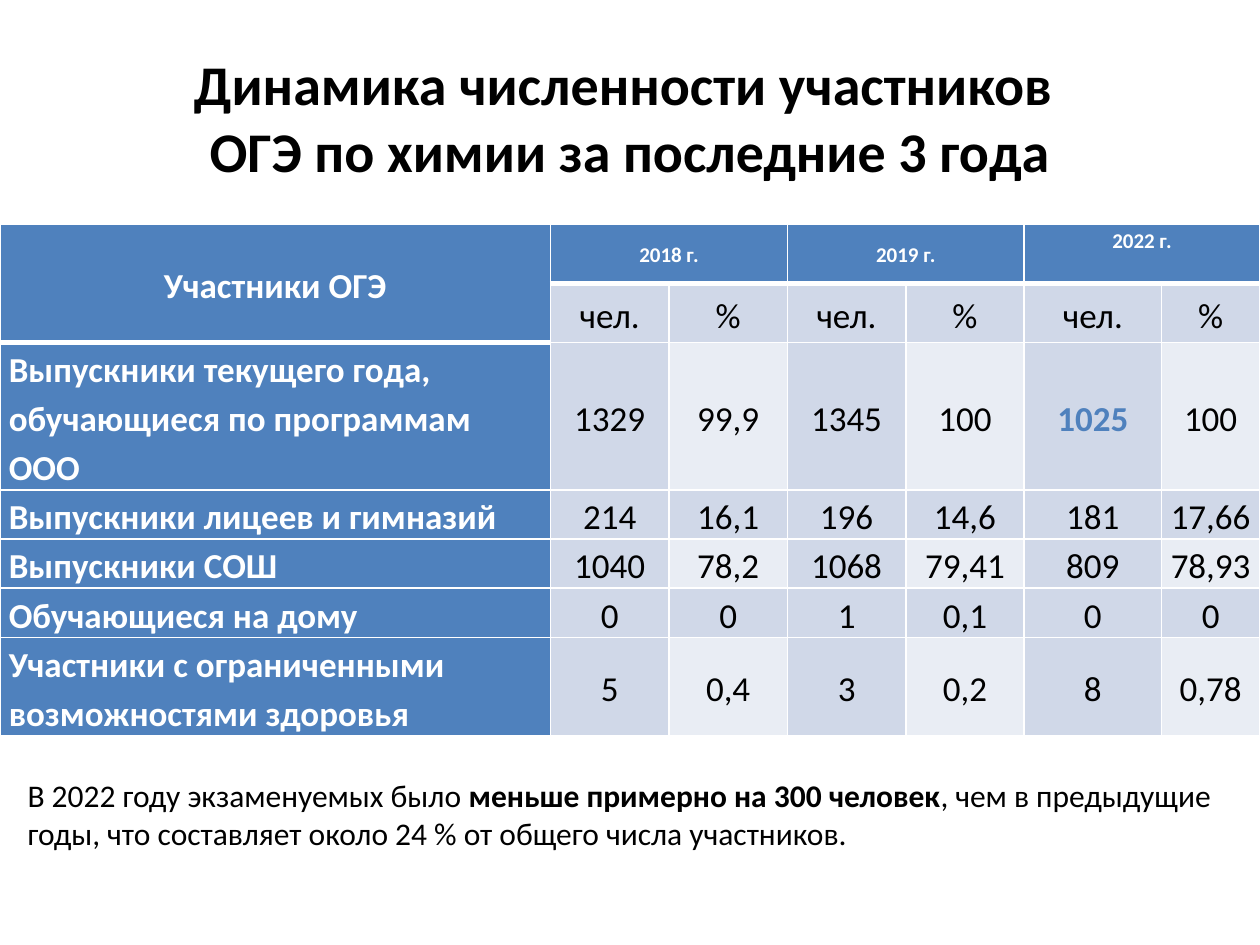
from itertools import accumulate
from typing import NamedTuple

from lxml.etree import SubElement
from pptx import Presentation
from pptx.dml.color import RGBColor as Rgb
from pptx.enum.text import MSO_ANCHOR as Anchor, PP_ALIGN as Align
from pptx.oxml.ns import qn
from pptx.util import Inches, Pt

SLIDE_WIDTH, SLIDE_HEIGHT = 10, 7.5
FONT = "Calibri"
COLORS = {
    "header": "4F81BD",
    "band": "D0D8E8",
    "light": "E9EDF4",
    "text": "000000",
    "white": "FFFFFF",
}
COLUMN_SHARES = (0.437, 0.094, 0.094, 0.094, 0.094, 0.109, 0.078)
ROW_HEIGHTS = (0.47, 0.47, 1.17, 0.39, 0.39, 0.39, 0.78)
YEARS = ("2018 г.", "2019 г.", "2022 г.")
TABLE_TOP = 1.78


class Box(NamedTuple):
    left: float
    top: float
    width: float
    height: float


class Group(NamedTuple):
    label: str
    values: tuple[str, ...]


GROUPS = (
    Group("Выпускники текущего года, обучающиеся по программам ООО",
          ("1329", "99,9", "1345", "100", "1025", "100")),
    Group("Выпускники лицеев и гимназий",
          ("214", "16,1", "196", "14,6", "181", "17,66")),
    Group("Выпускники СОШ",
          ("1040", "78,2", "1068", "79,41", "809", "78,93")),
    Group("Обучающиеся на дому", ("0", "0", "1", "0,1", "0", "0")),
    Group("Участники с ограниченными возможностями здоровья",
          ("5", "0,4", "3", "0,2", "8", "0,78")),
)
TITLE_BOX = Box(0.05, 0.04, 0.9, 1.25 / SLIDE_HEIGHT)
SUMMARY_BOX = Box(0.012, 6.11 / SLIDE_HEIGHT, 0.969, 1.01 / SLIDE_HEIGHT)


def write(paragraph, text: str, *, size: float, color: str = "text",
          bold: bool = False, align=Align.LEFT, spacing: float = 1.0) -> None:
    paragraph.alignment = align
    paragraph.line_spacing = spacing
    first = len(paragraph.runs)
    for index, line in enumerate(text.split("\n")):
        if index:
            paragraph.add_line_break()
        paragraph.add_run().text = line
    for run in paragraph.runs[first:]:
        run.font.name = FONT
        run.font.size = Pt(size)
        run.font.bold = bold
        run.font.color.rgb = Rgb.from_string(COLORS[color])


def add_text_area(slide, box: Box, anchor=Anchor.TOP):
    area = slide.shapes.add_textbox(
        Inches(box.left * SLIDE_WIDTH), Inches(box.top * SLIDE_HEIGHT),
        Inches(box.width * SLIDE_WIDTH), Inches(box.height * SLIDE_HEIGHT))
    area.text_frame.word_wrap = True
    area.text_frame.vertical_anchor = anchor
    return area.text_frame.paragraphs[0]


def set_borders(cell, top: float, bottom: float) -> None:
    properties = cell._tc.get_or_add_tcPr()
    sides = (("lnL", 1), ("lnR", 1), ("lnT", top), ("lnB", bottom))
    for position, (side, width) in enumerate(sides):
        line = SubElement(properties, qn(f"a:{side}"), w=str(Pt(width)))
        fill = SubElement(line, qn("a:solidFill"))
        SubElement(fill, qn("a:srgbClr"), val=COLORS["white"])
        properties.insert(position, line)


def style_cell(cell, row: int, column: int) -> None:
    cell.margin_left = cell.margin_right = Inches(0.07)
    cell.margin_top = cell.margin_bottom = 0
    cell.vertical_anchor = Anchor.MIDDLE
    if row == 0 or column == 0:
        fill = "header"
    else:
        fill = "light" if row % 2 == 0 and column % 2 == 0 else "band"
    cell.fill.solid()
    cell.fill.fore_color.rgb = Rgb.from_string(COLORS[fill])
    header_end = 1 if column == 0 else 0
    set_borders(cell, top=3 if row == header_end + 1 else 1,
                bottom=3 if row == header_end else 1)


def write_cell(cell, text: str, size: float = 20, color: str = "text",
               bold: bool = False, align=Align.CENTER) -> None:
    write(cell.text_frame.paragraphs[0], text, size=size, color=color,
          bold=bold, align=align, spacing=1.15)


def add_participants_table(slide) -> None:
    table = slide.shapes.add_table(
        len(ROW_HEIGHTS), len(COLUMN_SHARES), 0, Inches(TABLE_TOP),
        Inches(SLIDE_WIDTH), Inches(sum(ROW_HEIGHTS))).table
    table.first_row = table.horz_banding = False
    edges = [Inches(share * SLIDE_WIDTH)
             for share in accumulate(COLUMN_SHARES, initial=0)]
    for column, left, right in zip(table.columns, edges, edges[1:]):
        column.width = right - left
    for row, height in zip(table.rows, ROW_HEIGHTS):
        row.height = Inches(height)
    for row in range(len(ROW_HEIGHTS)):
        for column in range(len(COLUMN_SHARES)):
            style_cell(table.cell(row, column), row, column)

    table.cell(0, 0).merge(table.cell(1, 0))
    write_cell(table.cell(0, 0), "Участники ОГЭ", color="white", bold=True)
    for index, year in enumerate(YEARS):
        column = 1 + 2 * index
        year_cell = table.cell(0, column)
        year_cell.merge(table.cell(0, column + 1))
        write_cell(year_cell, year, size=12, color="white", bold=True)
        write_cell(table.cell(1, column), "чел.")
        write_cell(table.cell(1, column + 1), "%")
    year_cell.vertical_anchor = Anchor.TOP

    for row, group in enumerate(GROUPS, start=2):
        write_cell(table.cell(row, 0), group.label, color="white", bold=True,
                   align=Align.LEFT)
        for column, value in enumerate(group.values, start=1):
            highlighted = value == "1025"
            write_cell(table.cell(row, column), value, bold=highlighted,
                       color="header" if highlighted else "text")


def main() -> None:
    deck = Presentation()
    deck.slide_width = Inches(SLIDE_WIDTH)
    deck.slide_height = Inches(SLIDE_HEIGHT)
    slide = deck.slides.add_slide(deck.slide_layouts[6])

    title = add_text_area(slide, TITLE_BOX, Anchor.MIDDLE)
    write(title, "Динамика численности участников \nОГЭ по химии за последние 3 года",
          size=32, bold=True, align=Align.CENTER)
    add_participants_table(slide)

    summary = add_text_area(slide, SUMMARY_BOX)
    write(summary, "В 2022 году экзаменуемых было ", size=18)
    write(summary, "меньше примерно на 300 человек", size=18, bold=True)
    write(summary, ", чем в предыдущие годы, что составляет около 24 % "
          "от общего числа участников.", size=18)
    deck.save("out.pptx")


if __name__ == "__main__":
    main()
